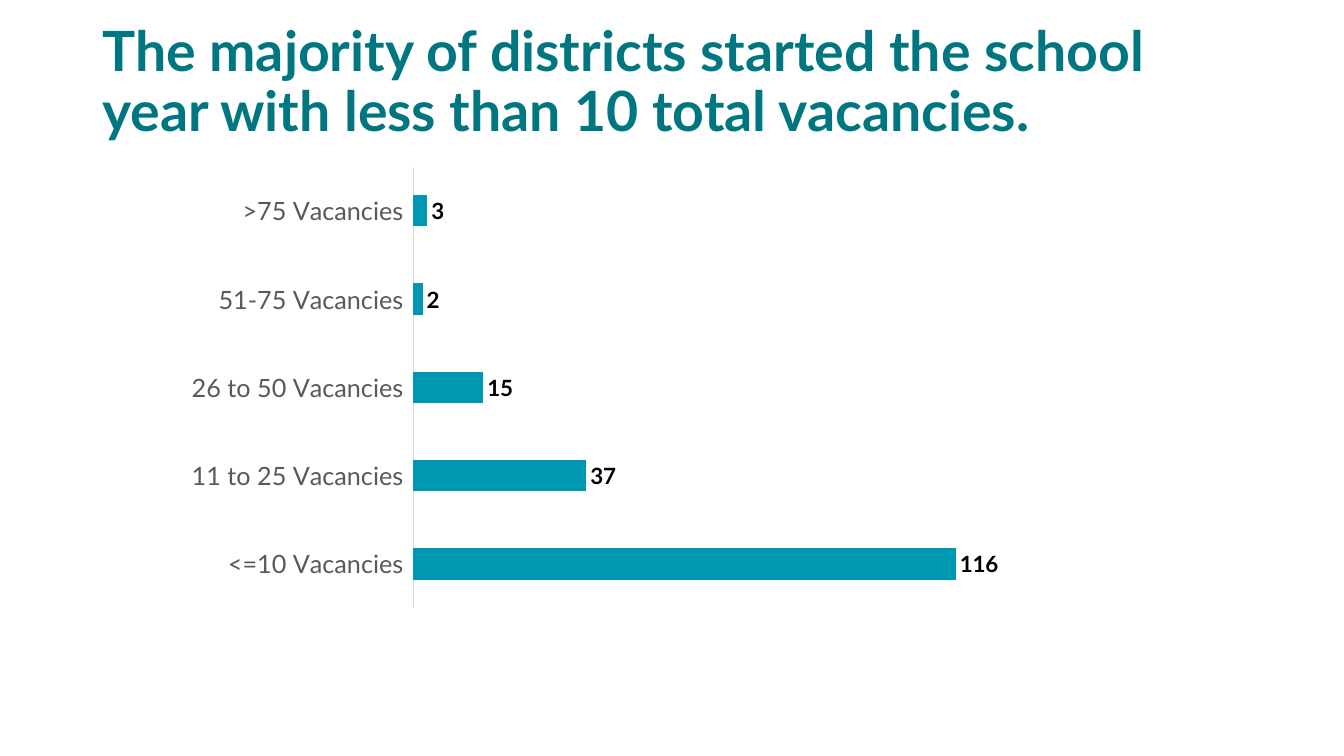
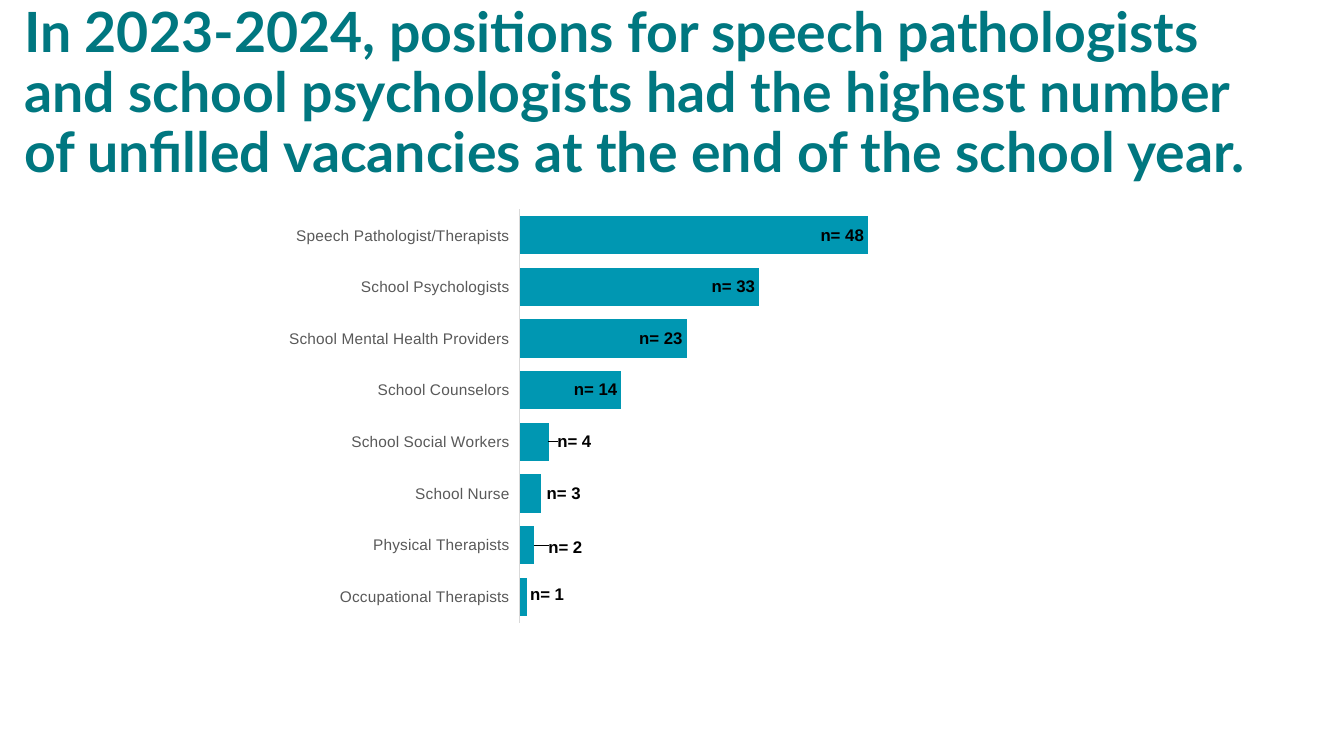
from dataclasses import dataclass

from lxml import etree
from pptx import Presentation
from pptx.chart.data import CategoryChartData
from pptx.dml.color import RGBColor
from pptx.enum.chart import XL_CHART_TYPE, XL_LABEL_POSITION, XL_TICK_LABEL_POSITION, XL_TICK_MARK
from pptx.enum.text import MSO_ANCHOR, MSO_AUTO_SIZE, PP_ALIGN
from pptx.oxml.ns import qn
from pptx.util import Pt

BAR_CLUSTERED = XL_CHART_TYPE.BAR_CLUSTERED
OUTSIDE_END = XL_LABEL_POSITION.OUTSIDE_END
INSIDE_END = XL_LABEL_POSITION.INSIDE_END
NO_TICK = XL_TICK_MARK.NONE
LOW = XL_TICK_LABEL_POSITION.LOW
TITLE_ONLY = 5


@dataclass(frozen=True)
class Theme:
    title_color: RGBColor = RGBColor(0x00, 0x77, 0x80)
    bar_color: RGBColor = RGBColor(0x00, 0x97, 0xB2)
    label_color: RGBColor = RGBColor(0x00, 0x00, 0x00)
    category_color: RGBColor = RGBColor(0x59, 0x59, 0x59)
    axis_color: RGBColor = RGBColor(0xD9, 0xD9, 0xD9)
    title_font: str = "Lato"
    title_size: float = 39.6
    chart_size: float = 10
    axis_width: float = 0.75


THEME = Theme()


@dataclass(frozen=True)
class BarStyle:
    font: str
    category_size: float
    label_size: float
    label_position: XL_LABEL_POSITION
    gap: int
    maximum: int
    plot: tuple  # left, top, width, height as shares of the chart
    show_name: bool = False


DISTRICT_STYLE = BarStyle("Lato", 18, 16, OUTSIDE_END, 182, 140, (0.258, 0.02, 0.722, 0.96))
POSITION_STYLE = BarStyle("Arial", 11, 12, INSIDE_END, 35, 60, (0.347, 0.02, 0.634, 0.96), True)

DISTRICTS = {
    "<=10 Vacancies": 116,
    "11 to 25 Vacancies": 37,
    "26 to 50 Vacancies": 15,
    "51-75 Vacancies": 2,
    ">75 Vacancies": 3,
}
POSITIONS = {
    "Occupational Therapists": 1,
    "Physical Therapists": 2,
    "School Nurse": 3,
    "School Social Workers": 4,
    "School Counselors": 14,
    "School Mental Health Providers": 23,
    "School Psychologists": 33,
    "Speech Pathologist/Therapists": 48,
}
# Shifts that carry the labels of short bars past the bar end, as shares of the chart
SHORT_BAR_SHIFTS = [(0.06, -0.006), (0.076, 0.007), (0.063, 0), (0.068, 0)]


def set_font(font, name, size, color, bold=False):
    font.name = name
    font.size = Pt(size)
    font.color.rgb = color
    font.bold = bold


def manual_layout(**settings):
    layout = etree.Element(qn("c:layout"))
    manual = etree.SubElement(layout, qn("c:manualLayout"))
    for tag, value in settings.items():
        etree.SubElement(manual, qn(f"c:{tag}")).set("val", str(value))
    return layout


def add_title(page, box, text):
    title = page.shapes.title
    title.left, title.top, title.width, title.height = map(Pt, box)
    frame = title.text_frame
    frame.word_wrap = True
    frame.auto_size = MSO_AUTO_SIZE.NONE
    frame.vertical_anchor = MSO_ANCHOR.MIDDLE
    para = frame.paragraphs[0]
    para.alignment = PP_ALIGN.LEFT
    para.line_spacing = 0.9
    span = para.add_run()
    span.text = text
    set_font(span.font, THEME.title_font, THEME.title_size, THEME.title_color, True)


def style_axes(chart, style):
    categories = chart.category_axis
    categories.major_tick_mark = categories.minor_tick_mark = NO_TICK
    categories.tick_label_position = LOW
    categories.has_major_gridlines = False
    categories.format.line.color.rgb = THEME.axis_color
    categories.format.line.width = Pt(THEME.axis_width)
    set_font(categories.tick_labels.font, style.font, style.category_size, THEME.category_color)
    values = chart.value_axis
    values.visible = False
    values.has_major_gridlines = False
    values.minimum_scale = 0
    values.maximum_scale = style.maximum


def style_labels(chart, series, style, shifts):
    labels = series.data_labels
    labels.show_value = True
    labels.show_series_name = style.show_name
    point_labels = [series.points[index].data_label for index in range(len(shifts))]
    for label in [labels, *point_labels]:
        set_font(label.font, style.font, style.label_size, THEME.label_color, True)
        label.position = style.label_position
    for element, (x, y) in zip(chart.element.xpath(".//c:dLbl"), shifts):
        element.find(qn("c:idx")).addnext(manual_layout(x=x, y=y))
    if style.show_name:
        for element in chart.element.xpath(".//c:dLbl | .//c:ser/c:dLbls"):
            element.find(qn("c:showSerName")).set("val", "1")
            separator = etree.Element(qn("c:separator"))
            separator.text = " "
            element.find(qn("c:showBubbleSize")).addnext(separator)


def add_bar_chart(page, box, series_name, counts, style, shifts=()):
    data = CategoryChartData()
    data.categories = list(counts)
    data.add_series(series_name, list(counts.values()))
    chart = page.shapes.add_chart(BAR_CLUSTERED, *map(Pt, box), data).chart
    chart.has_title = False
    chart.has_legend = False
    set_font(chart.font, style.font, THEME.chart_size, THEME.label_color)
    plot = chart.plots[0]
    plot.vary_by_categories = False
    plot.gap_width = style.gap
    series = plot.series[0]
    series.format.fill.solid()
    series.format.fill.fore_color.rgb = THEME.bar_color
    style_axes(chart, style)
    style_labels(chart, series, style, shifts)

    plot_area = chart.element.xpath(".//c:plotArea")[0]
    for layout in plot_area.findall(qn("c:layout")):
        plot_area.remove(layout)
    left, top, width, height = style.plot
    plot_area.insert(0, manual_layout(layoutTarget="inner", xMode="edge", yMode="edge",
                                      x=left, y=top, w=width, h=height))


def add_page(deck, title_box, title, chart_box, *chart_parts):
    page = deck.slides.add_slide(deck.slide_layouts[TITLE_ONLY])
    add_title(page, title_box, title)
    add_bar_chart(page, chart_box, *chart_parts)


def main():
    deck = Presentation()
    deck.slide_width, deck.slide_height = Pt(960), Pt(540)
    add_page(
        deck, (66, 7.5, 828, 104.5),
        "The majority of districts started the school year with less than 10 total vacancies.",
        (128, 112.5, 648, 328.5), "Series 1", DISTRICTS, DISTRICT_STYLE,
    )
    add_page(
        deck, (10, 15.5, 896.5, 104.5),
        "In 2023-2024, positions for speech pathologists and school psychologists "
        "had the highest number of unfilled vacancies at the end of the school year.",
        (201, 143.5, 490.5, 307.5), "n=", POSITIONS, POSITION_STYLE, SHORT_BAR_SHIFTS,
    )
    deck.save("out.pptx")


if __name__ == "__main__":
    main()
